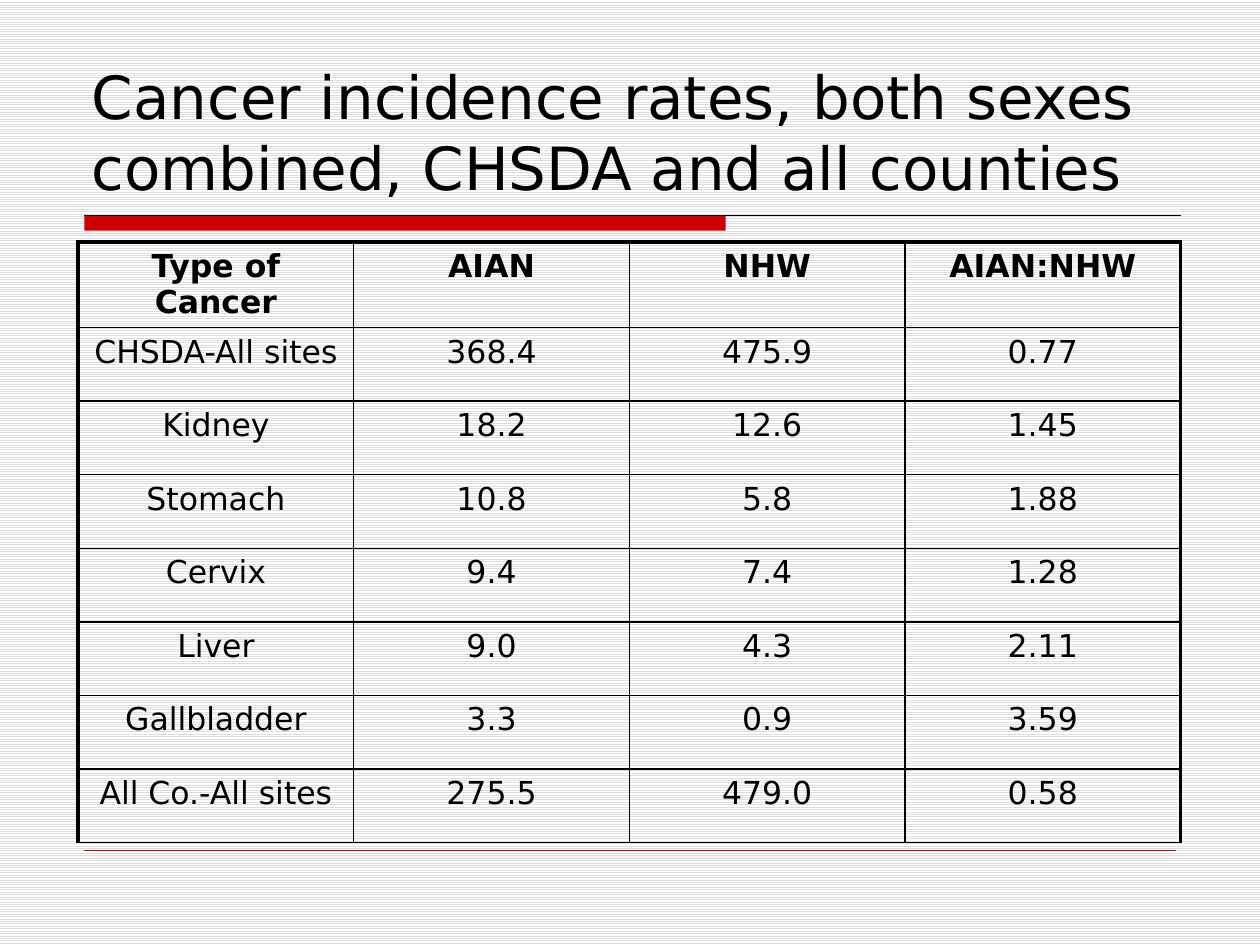
from dataclasses import dataclass

from lxml.etree import SubElement
from pptx import Presentation
from pptx.dml.color import RGBColor
from pptx.enum.dml import MSO_PATTERN
from pptx.enum.shapes import MSO_CONNECTOR, MSO_SHAPE
from pptx.enum.text import MSO_ANCHOR, MSO_AUTO_SIZE, PP_ALIGN
from pptx.oxml.ns import qn
from pptx.slide import Slide
from pptx.table import _Cell
from pptx.text.text import _Paragraph
from pptx.util import Inches, Pt


@dataclass(frozen=True)
class Theme:
    font: str = "DejaVu Sans"
    ink: str = "000000"
    accent: str = "CC0000"
    stripe: str = "DDDDDD"
    paper: str = "FFFFFF"
    title_size: float = 34
    table_size: float = 18
    outer_border: float = 2.25
    inner_border: float = 1


@dataclass(frozen=True)
class Rule:
    left: float
    right: float
    top: float
    color: str
    width: float


THEME = Theme()
TITLE = "Cancer incidence rates, both sexes combined, CHSDA and all counties"
RULES = [
    Rule(0.67, 9.37, 1.71, THEME.ink, 0.75),
    Rule(0.67, 9.33, 6.75, THEME.accent, 0.25),
]
RATES = [
    ("Type of Cancer", "AIAN", "NHW", "AIAN:NHW"),
    ("CHSDA-All sites", "368.4", "475.9", "0.77"),
    ("Kidney", "18.2", "12.6", "1.45"),
    ("Stomach", "10.8", "5.8", "1.88"),
    ("Cervix", "9.4", "7.4", "1.28"),
    ("Liver", "9.0", "4.3", "2.11"),
    ("Gallbladder", "3.3", "0.9", "3.59"),
    ("All Co.-All sites", "275.5", "479.0", "0.58"),
]


def paint_background(slide: Slide) -> None:
    fill = slide.background.fill
    fill.patterned()
    fill.pattern = MSO_PATTERN.LIGHT_HORIZONTAL
    fill.fore_color.rgb = RGBColor.from_string(THEME.stripe)
    fill.back_color.rgb = RGBColor.from_string(THEME.paper)


def format_runs(paragraph: _Paragraph, size: float, bold: bool = False) -> None:
    for run in paragraph.runs:
        run.font.name = THEME.font
        run.font.size = Pt(size)
        run.font.bold = bold
        run.font.color.rgb = RGBColor.from_string(THEME.ink)


def add_title(slide: Slide) -> None:
    title = slide.shapes.title
    title.left, title.top = Inches(0.63), Inches(0.33)
    title.width, title.height = Inches(8.75), Inches(1.33)
    frame = title.text_frame
    frame.text = TITLE
    frame.word_wrap = True
    frame.auto_size = MSO_AUTO_SIZE.NONE
    frame.vertical_anchor = MSO_ANCHOR.BOTTOM
    paragraph = frame.paragraphs[0]
    paragraph.alignment = PP_ALIGN.LEFT
    format_runs(paragraph, THEME.title_size)


def add_accent_bar(slide: Slide) -> None:
    bar = slide.shapes.add_shape(
        MSO_SHAPE.RECTANGLE, Inches(0.67), Inches(1.71), Inches(5.09), Inches(0.12)
    )
    bar.shadow.inherit = False
    bar.fill.solid()
    bar.fill.fore_color.rgb = RGBColor.from_string(THEME.accent)
    bar.line.fill.background()


def add_rule(slide: Slide, rule: Rule) -> None:
    connector = slide.shapes.add_connector(
        MSO_CONNECTOR.STRAIGHT,
        Inches(rule.left), Inches(rule.top), Inches(rule.right), Inches(rule.top),
    )
    connector.line.color.rgb = RGBColor.from_string(rule.color)
    connector.line.width = Pt(rule.width)
    SubElement(connector._element.spPr, qn("a:effectLst"))


def set_borders(cell: _Cell, outer_sides: set[str]) -> None:
    properties = cell._tc.get_or_add_tcPr()
    for side in ("L", "R", "T", "B"):
        width = THEME.outer_border if side in outer_sides else THEME.inner_border
        border = SubElement(properties, qn(f"a:ln{side}"), w=str(Pt(width)))
        fill = SubElement(border, qn("a:solidFill"))
        SubElement(fill, qn("a:srgbClr"), val=THEME.ink)


def add_rates_table(slide: Slide) -> None:
    last_column = len(RATES[0]) - 1
    table = slide.shapes.add_table(
        len(RATES), len(RATES[0]),
        Inches(0.62), Inches(1.92), Inches(8.75), Inches(4.67),
    ).table
    table.first_row = False
    table.horz_banding = False
    for row, values in enumerate(RATES):
        for column, value in enumerate(values):
            cell = table.cell(row, column)
            edges = {"L": column == 0, "R": column == last_column, "T": row == 0}
            set_borders(cell, {side for side, outer in edges.items() if outer})
            cell.fill.background()
            cell.text_frame.text = value
            paragraph = cell.text_frame.paragraphs[0]
            paragraph.alignment = PP_ALIGN.CENTER
            paragraph.space_before = Pt(0.2 * THEME.table_size)
            format_runs(paragraph, THEME.table_size, bold=row == 0)


def main() -> None:
    presentation = Presentation()
    presentation.slide_width = Inches(10)
    presentation.slide_height = Inches(7.5)
    slide = presentation.slides.add_slide(presentation.slide_layouts[5])
    paint_background(slide)
    add_accent_bar(slide)
    for rule in RULES:
        add_rule(slide, rule)
    add_title(slide)
    add_rates_table(slide)
    presentation.save("out.pptx")


if __name__ == "__main__":
    main()
